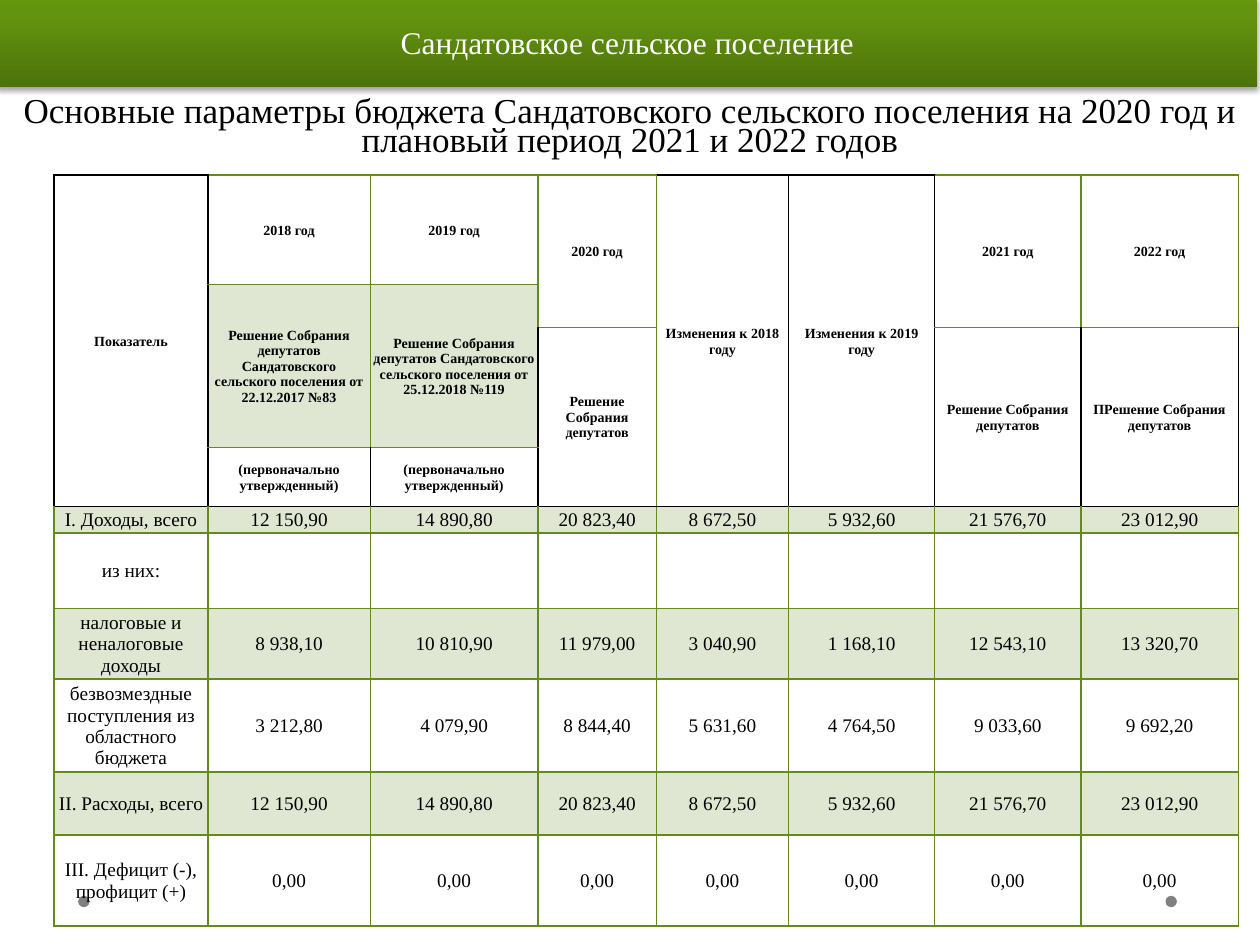
from copy import deepcopy
from dataclasses import dataclass

from lxml.etree import SubElement
from pptx import Presentation
from pptx.dml.color import RGBColor
from pptx.enum.shapes import MSO_SHAPE as Shape
from pptx.enum.text import MSO_ANCHOR as Anchor, MSO_AUTO_SIZE as AutoSize, PP_ALIGN as Align
from pptx.oxml.ns import qn
from pptx.util import Pt


@dataclass(frozen=True)
class Theme:
    font: str = "Times New Roman"
    green: str = "63891F"
    black: str = "000000"
    white: str = "FFFFFF"
    dot: str = "808080"
    banner: tuple = ((0, "4D720B"), (80, "64940F"), (100, "65970C"))
    banner_size: int = 18
    title_size: int = 20
    head_size: int = 8
    body_size: int = 11


THEME = Theme()
COLUMN_WIDTHS = (87.84, 92.88, 95.76, 67.68, 75.6, 83.52, 83.52, 90)
ROW_HEIGHTS = (62.64, 24.48, 68.4, 33.84, 15.12, 43.2, 40.32, 53.28, 36, 51.84)
HEAD_ROWS = 4
SHADED_ROWS = (4, 6, 8)

DECISION = "Решение Собрания депутатов"
APPROVED = "(первоначально утвержденный)"
HEADINGS = (
    (0, 0, 4, "Показатель"),
    (0, 1, 1, "2018 год"),
    (0, 2, 1, "2019 год"),
    (0, 3, 2, "2020 год"),
    (0, 4, 4, "Изменения к 2018 году"),
    (0, 5, 4, "Изменения к 2019 году"),
    (0, 6, 2, "2021 год"),
    (0, 7, 2, "2022 год"),
    (1, 1, 2, f"{DECISION} Сандатовского сельского поселения от 22.12.2017 №83"),
    (1, 2, 2, f"{DECISION} Сандатовского сельского поселения от 25.12.2018 №119"),
    (2, 3, 2, DECISION),
    (2, 6, 2, DECISION),
    (2, 7, 2, "П" + DECISION),
    (3, 1, 1, APPROVED),
    (3, 2, 1, APPROVED),
)
TOTALS = ("12 150,90", "14 890,80", "20 823,40", "8 672,50", "5 932,60", "21 576,70", "23 012,90")
BUDGET = (
    ("I. Доходы, всего", *TOTALS),
    ("из них:", *[""] * 7),
    ("налоговые и неналоговые доходы", "8 938,10", "10 810,90", "11 979,00",
     "3 040,90", "1 168,10", "12 543,10", "13 320,70"),
    ("безвозмездные поступления из областного бюджета", "3 212,80", "4 079,90", "8 844,40",
     "5 631,60", "4 764,50", "9 033,60", "9 692,20"),
    ("II. Расходы, всего", *TOTALS),
    ("III. Дефицит (-), профицит (+)", *["0,00"] * 7),
)
BLACK_SIDES = {
    (0, 0): "LRTB", (0, 4): "RTB", (0, 5): "LRTB", (1, 1): "", (3, 1): "LRB",
    (3, 2): "LRB", (2, 3): "LB", (2, 6): "LRB", (2, 7): "LRB",
}
FACING = {"L": (0, -1, "R"), "R": (0, 1, "L"), "T": (-1, 0, "B"), "B": (1, 0, "T")}


def format_text(frame, size, color, bold=False):
    for paragraph in frame.paragraphs:
        paragraph.alignment = Align.CENTER
        for run in paragraph.runs:
            run.font.name = THEME.font
            run.font.size = Pt(size)
            run.font.bold = bold
            run.font.color.rgb = RGBColor.from_string(color)


def set_insets(frame, left, top, right, bottom):
    frame.margin_left, frame.margin_top = Pt(left), Pt(top)
    frame.margin_right, frame.margin_bottom = Pt(right), Pt(bottom)


def place_page_dots(slide, left, top, width, size):
    for x in (left, left + width - size):
        dot = slide.shapes.add_shape(Shape.OVAL, Pt(x), Pt(top), Pt(size), Pt(size))
        dot.shadow.inherit = False
        dot.fill.solid()
        dot.fill.fore_color.rgb = RGBColor.from_string(THEME.dot)
        dot.line.fill.background()


def place_title(slide, left, top, width, height):
    title = slide.shapes.title
    title.left, title.top, title.width, title.height = map(Pt, (left, top, width, height))
    frame = title.text_frame
    frame.text = ("Основные параметры бюджета Сандатовского сельского поселения "
                  "на 2020 год и плановый период 2021 и 2022 годов")
    frame.word_wrap = True
    frame.auto_size = AutoSize.NONE
    frame.vertical_anchor = Anchor.BOTTOM
    set_insets(frame, 7.2, 0.72, 7.2, 3.6)
    frame.paragraphs[0].line_spacing = 0.7
    format_text(frame, THEME.title_size, THEME.black)


def fill_cell(cell, text, size, bold, shaded):
    cell.text_frame.text = text
    cell.vertical_anchor = Anchor.MIDDLE
    set_insets(cell, 0.72, 0.72, 0.72, 0)
    format_text(cell.text_frame, size, THEME.black, bold)
    if not shaded:
        cell.fill.background()
        return
    cell.fill.solid()
    cell.fill.fore_color.rgb = RGBColor.from_string(THEME.green)
    tint = cell._tc.tcPr.find(qn("a:solidFill"))[0]
    SubElement(tint, qn("a:alpha"), val="20000")


def span_edges(row, column, span):
    for r in range(row, row + span):
        yield r, column, "L"
        yield r, column, "R"
    yield row, column, "T"
    yield row + span - 1, column, "B"


def border_colors(spans):
    colors = {}
    for row, column, span in spans:
        for edge in span_edges(row, column, span):
            colors.setdefault(edge, THEME.green)
        for r, c, side in span_edges(row, column, span):
            if side in BLACK_SIDES.get((row, column), ""):
                down, across, facing = FACING[side]
                colors[r, c, side] = colors[r + down, c + across, facing] = THEME.black
    for row, column, span in spans:
        colors[row, column, "B"] = colors[row + span - 1, column, "B"]
    return colors


def draw_borders(table, colors):
    for r in range(len(ROW_HEIGHTS)):
        for c in range(len(COLUMN_WIDTHS)):
            properties = table.cell(r, c)._tc.get_or_add_tcPr()
            sides = [side for side in "LRTB" if (r, c, side) in colors]
            for place, side in enumerate(sides):
                line = SubElement(properties, qn(f"a:ln{side}"), w=str(Pt(1)))
                fill = SubElement(line, qn("a:solidFill"))
                SubElement(fill, qn("a:srgbClr"), val=colors[r, c, side])
                properties.insert(place, line)


def place_budget_table(slide, left, top):
    frame = slide.shapes.add_table(len(ROW_HEIGHTS), len(COLUMN_WIDTHS), Pt(left), Pt(top),
                                   Pt(sum(COLUMN_WIDTHS)), Pt(sum(ROW_HEIGHTS)))
    table = frame.table
    table.first_row = table.horz_banding = False
    for column, width in zip(table.columns, COLUMN_WIDTHS):
        column.width = Pt(width)
    for row, height in zip(table.rows, ROW_HEIGHTS):
        row.height = Pt(height)

    spans = [heading[:3] for heading in HEADINGS]
    for row, column, span, text in HEADINGS:
        cell = table.cell(row, column)
        if span > 1:
            cell.merge(table.cell(row + span - 1, column))
        fill_cell(cell, text, THEME.head_size, True, row == 1)
    for row, values in enumerate(BUDGET, HEAD_ROWS):
        for column, text in enumerate(values):
            spans.append((row, column, 1))
            fill_cell(table.cell(row, column), text, THEME.body_size, False, row in SHADED_ROWS)
    draw_borders(table, border_colors(spans))


def place_banner(slide, left, top, width, height):
    banner = slide.shapes.add_shape(Shape.RECTANGLE, Pt(left), Pt(top), Pt(width), Pt(height))
    banner.line.fill.background()
    banner.fill.gradient()
    banner.fill.gradient_angle = 90
    stops = banner.element.spPr.find(qn("a:gradFill")).find(qn("a:gsLst"))
    stops.append(deepcopy(stops[-1]))
    for stop, (position, color) in zip(banner.fill.gradient_stops, THEME.banner):
        stop.position = position / 100
        stop.color.rgb = RGBColor.from_string(color)

    banner.shadow.inherit = False
    effects = banner.element.spPr.find(qn("a:effectLst"))
    shadow = SubElement(effects, qn("a:outerShdw"), blurRad=str(Pt(3.1)), dist=str(Pt(1.8)),
                        dir="5400000", rotWithShape="0")
    shade = SubElement(shadow, qn("a:srgbClr"), val=THEME.black)
    SubElement(shade, qn("a:alpha"), val="35000")

    banner.text_frame.text = "Сандатовское сельское поселение"
    banner.text_frame.vertical_anchor = Anchor.MIDDLE
    format_text(banner.text_frame, THEME.banner_size, THEME.white)


def main():
    deck = Presentation()
    deck.slide_width, deck.slide_height = Pt(720), Pt(540)
    slide = deck.slides.add_slide(deck.slide_layouts[5])
    place_page_dots(slide, 44.64, 511.92, 627.84, 6.48)
    place_title(slide, 0, 60.48, 720, 33.84)
    place_budget_table(slide, 30.96, 100.08)
    place_banner(slide, -1.44, -2.16, 720, 51.84)
    deck.save("out.pptx")


if __name__ == "__main__":
    main()
